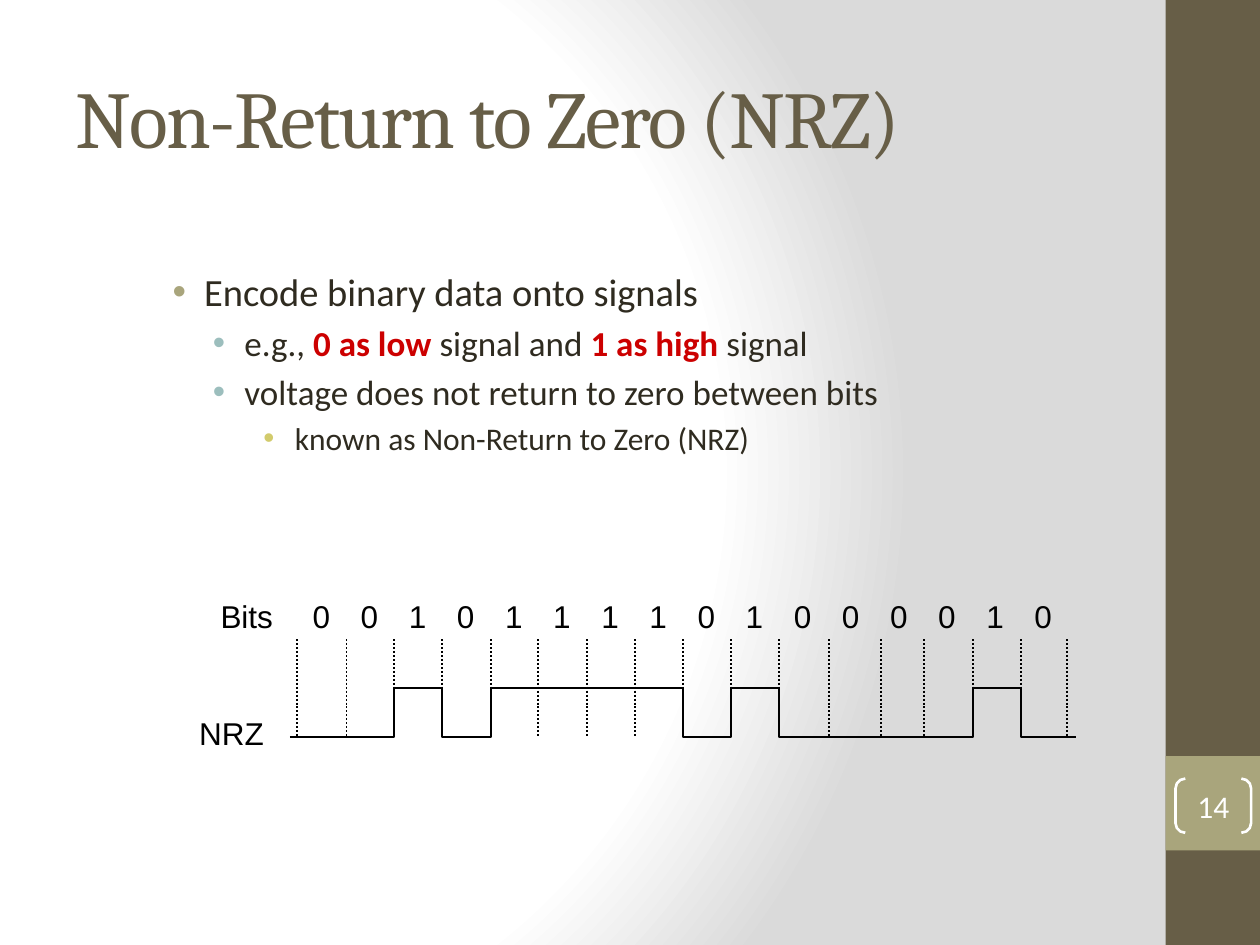
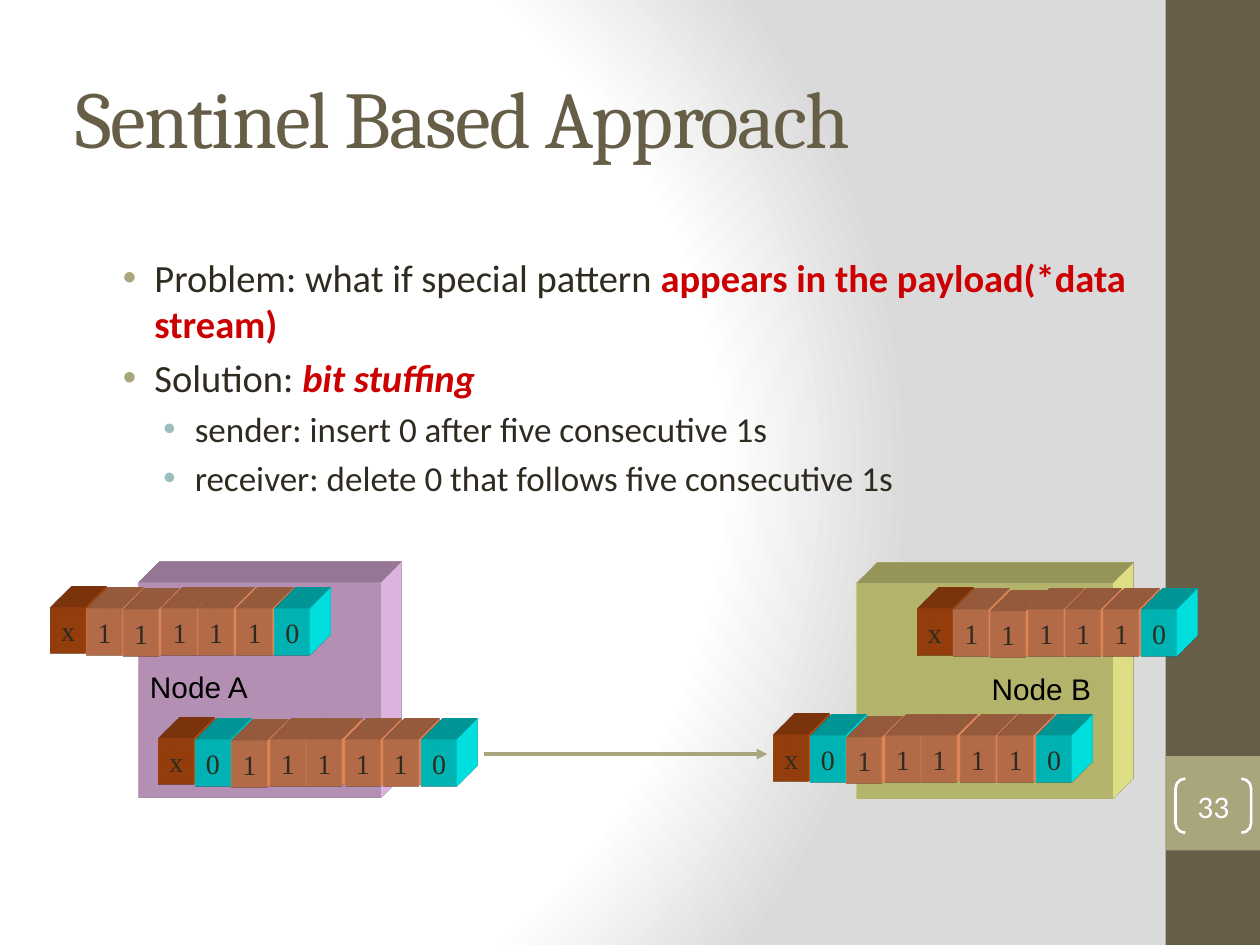
"""Builds two slides on line coding and framing."""
import collections
import pptx
import pptx.dml.color
import pptx.enum.dml
import pptx.enum.shapes
import pptx.enum.text
import pptx.oxml.ns
import pptx.util
from lxml import etree

RGB = pptx.dml.color.RGBColor
SHAPE = pptx.enum.shapes.MSO_SHAPE
LINE = pptx.enum.shapes.MSO_CONNECTOR.STRAIGHT
ALIGN = pptx.enum.text.PP_ALIGN
ANCHOR = pptx.enum.text.MSO_ANCHOR
qn = pptx.oxml.ns.qn

BROWN = RGB(0x67, 0x5E, 0x47)
KHAKI = RGB(0xA9, 0xA5, 0x7C)
INK = RGB(0x2F, 0x2B, 0x20)
RED = RGB(0xCC, 0x00, 0x00)
BLACK = RGB(0x00, 0x00, 0x00)
WHITE = RGB(0xFF, 0xFF, 0xFF)
GREY = RGB(0xDA, 0xDA, 0xDA)
PINK = RGB(0xFF, 0xCC, 0xFF)
YELLOW = RGB(0xFF, 0xFF, 0x99)
BULLETS = (KHAKI, RGB(0x9C, 0xBE, 0xBD), RGB(0xD2, 0xCB, 0x6C))
BLOCKS = {"x": RGB(0xD2, 0x58, 0x14), "0": RGB(0x00, 0xFF, 0xFF), "1": RGB(0xFF, 0x99, 0x66)}

COLS, ROWS = 100, 75
CELL = pptx.util.Inches(0.1)
LEVEL_SIZES = (22, 20, 18)
LEVEL_INDENTS = (3.8, 7, 11)
HANG = 2.5
BOUNDS = (0, 3.9, 7.7, 11.5, 15.4, 19.1, 23, 26.8, 30.6, 34.4, 38.2, 42.2, 46.3, 49.7, 53.6, 57.4, 61.1)
SLOTS = ((0, 0), (2.9, 0.1), (5.8, 0.2), (8.85, 0.1), (11.75, 0.1), (14.8, 0.1), (17.8, 0.1), (20.85, 0.1))
STRONG = dict(color=RED, bold=True)

Box = collections.namedtuple("Box", "x y w h")


def cells(*values):
    """Turn grid cells into lengths."""
    return [pptx.util.Emu(round(v * CELL)) for v in values]


def add(parent, tag, **attributes):
    """Append a drawing element."""
    return etree.SubElement(parent, qn("a:" + tag), **attributes)


def write(p, text, size=18, font="Arial", color=BLACK, bold=False, italic=False, align=None, spacing=None):
    """Add one formatted run to a paragraph."""
    r = p.add_run()
    r.text = text
    r.font.size, r.font.name = pptx.util.Pt(size), font
    r.font.bold, r.font.italic = bold, italic
    r.font.color.rgb = color
    if align is not None:
        p.alignment = align
    if spacing is not None:
        r._r.get_or_add_rPr().set("spc", str(spacing))


def bare_frame(sp):
    """Remove the margins of a shape's text."""
    tf = sp.text_frame
    tf.margin_left = tf.margin_right = tf.margin_top = tf.margin_bottom = 0
    tf.word_wrap = False
    return tf


def label(s, box, text, **fmt):
    """Place a plain text box."""
    tf = bare_frame(s.shapes.add_textbox(*cells(*box)))
    write(tf.paragraphs[0], text, **fmt)


def paint(sp, fill=None, line=None, width=1):
    """Set fill and line, without shadow."""
    sp.shadow.inherit = False
    if fill is None:
        sp.fill.background()
    else:
        sp.fill.solid()
        sp.fill.fore_color.rgb = fill
    if line is None:
        sp.line.fill.background()
    else:
        sp.line.color.rgb = line
        sp.line.width = pptx.util.Pt(width)
    return sp


def shape(s, kind, box, **look):
    """Place a painted preset shape."""
    return paint(s.shapes.add_shape(kind, *cells(*box)), **look)


def outline(s, points, close=True, **look):
    """Draw a freeform through grid points."""
    start, *rest = [cells(*pt) for pt in points]
    fb = s.shapes.build_freeform(*start)
    fb.add_line_segments(rest, close=close)
    return paint(fb.convert_to_shape(), **look)


def extrude(sp, color):
    """Give a shape an oblique depth to the top right."""
    spPr = sp._element.spPr
    scene = add(spPr, "scene3d")
    add(scene, "camera", prst="legacyObliqueTopRight")
    add(scene, "lightRig", rig="legacyFlat3", dir="b")
    solid = add(spPr, "sp3d", extrusionH="430200", prstMaterial="legacyMatte")
    for bevel in ("bevelT", "bevelB"):
        add(solid, bevel, w="13500", h="13500", prst="angle")
    add(add(solid, "extrusionClr"), "srgbClr", val=str(color))
    return sp


def connect(s, start, end, color, width):
    """Draw a straight line without shadow."""
    c = s.shapes.add_connector(LINE, *cells(*start, *end))
    c.line.color.rgb = color
    c.line.width = pptx.util.Pt(width)
    add(c._element.spPr, "effectLst")
    return c


def set_background(master):
    """Give the master a round gradient."""
    master.background.fill.gradient()
    grad = next(master.element.iter(qn("a:gradFill")))
    for child in list(grad):
        grad.remove(child)
    stops = add(grad, "gsLst")
    for pos, color in ((0, WHITE), (75, WHITE), (100, GREY)):
        add(add(stops, "gs", pos=str(pos * 1000)), "srgbClr", val=str(color))
    circle = add(grad, "path", path="circle")
    add(circle, "fillToRect", l="20000", t="50000", r="100000", b="50000")


def side_band(s, box, number):
    """Draw the right band with the page number."""
    shape(s, SHAPE.RECTANGLE, box, fill=BROWN)
    tab = Box(box.x, box.y + 0.8 * box.h, box.w, box.w)
    shape(s, SHAPE.RECTANGLE, tab, fill=KHAKI)
    sp = shape(s, SHAPE.DOUBLE_BRACKET, (tab.x + 0.8, tab.y + 1.8, 6, 4.3), line=WHITE, width=1.5)
    sp.adjustments[0] = 0.18
    tf = bare_frame(sp)
    tf.vertical_anchor = ANCHOR.MIDDLE
    write(tf.paragraphs[0], str(number), font="Calibri", color=WHITE, align=ALIGN.CENTER)


def place(ph, box, anchor):
    """Move a placeholder and fix its text area."""
    ph.left, ph.top, ph.width, ph.height = cells(*box)
    tf = ph.text_frame
    tf.word_wrap = True
    tf.auto_size = pptx.enum.text.MSO_AUTO_SIZE.NONE
    tf.vertical_anchor = anchor
    return tf


def bullet(p, level):
    """Set indent and coloured bullet of a list level."""
    p.level = level
    pPr = p._p.get_or_add_pPr()
    indent, hang = cells(LEVEL_INDENTS[level], -HANG)
    pPr.set("marL", str(indent))
    pPr.set("indent", str(hang))
    add(add(pPr, "buClr"), "srgbClr", val=str(BULLETS[level]))
    add(pPr, "buFont", typeface="Arial")
    add(pPr, "buChar", char="•")


def bullet_list(ph, box, items):
    """Fill the body with levelled items of runs."""
    tf = place(ph, box, ANCHOR.TOP)
    for i, (level, runs) in enumerate(items):
        p = tf.add_paragraph() if i else tf.paragraphs[0]
        bullet(p, level)
        if i == 0:
            p.space_before = pptx.util.Pt(0)
        for text, fmt in runs:
            write(p, text, **{"size": LEVEL_SIZES[level], "font": "Calibri", "color": INK, **fmt})


def content_slide(prs, title, number, body_box, items):
    """Add a slide with title, list and side band."""
    s = prs.slides.add_slide(prs.slide_layouts[1])
    tf = place(s.shapes.title, (5, 3, 83.3, 12.5), ANCHOR.MIDDLE)
    write(tf.paragraphs[0], title, size=46, font="Cambria", color=BROWN, align=ALIGN.LEFT, spacing=-100)
    bullet_list(s.placeholders[1], body_box, items)
    side_band(s, Box(92.5, 0, 7.5, ROWS), number)
    return s


def signal_chart(s, box, bits):
    """Draw bits, their boundaries and the NRZ signal."""
    left, low = box.x + 7.8, box.y + box.h
    high, step = low - 3.9, BOUNDS[-1] / len(bits)
    label(s, (box.x + 1.7, box.y, 4.2, 3), "Bits")
    label(s, (box.x, low - 1.8, 5.2, 3), "NRZ")
    for i, bit in enumerate(bits):
        label(s, (left + i * step, box.y, step, 3), bit, align=ALIGN.CENTER)
    for bound in BOUNDS:
        c = connect(s, (left + bound, box.y + 3.3), (left + bound, low), BLACK, 1.13)
        c.line.dash_style = pptx.enum.dml.MSO_LINE.ROUND_DOT
    points = [(left - 0.6, low)]
    for before, bit, bound in zip(bits, bits[1:], BOUNDS[1:]):
        if bit != before:
            levels = (low, high) if bit == "1" else (high, low)
            points += [(left + bound, y) for y in levels]
    points.append((box.x + box.w, low))
    outline(s, points, close=False, line=BLACK, width=1.13)


def bit_row(s, x, y, bits):
    """Line up one block for each bit."""
    for bit, (dx, dy) in zip(bits, SLOTS):
        color = BLOCKS[bit]
        sp = shape(s, SHAPE.RECTANGLE, (x + dx, y + dy, 2.8, 3.7), fill=color)
        tf = bare_frame(extrude(sp, color))
        tf.vertical_anchor = ANCHOR.MIDDLE
        write(tf.paragraphs[0], bit, size=16, font="Times New Roman", color=INK, align=ALIGN.CENTER)


def node(s, box, name, color, name_x, plain_at, stuffed_at):
    """Draw a node with its plain and stuffed bits."""
    right, low = box.x + box.w, box.y + box.h
    corners = [(box.x, box.y), (right, box.y), (right, low), (box.x, low)]
    extrude(outline(s, corners, fill=color), color)
    label(s, (box.x + name_x, box.y + 6.9, 8.2, 2.8), name, size=17)
    bit_row(s, box.x + plain_at[0], box.y + plain_at[1], "x111110")
    bit_row(s, box.x + stuffed_at[0], box.y + stuffed_at[1], "x0111110")


def nrz_slide(prs):
    """Build the slide on NRZ coding."""
    s = content_slide(prs, "Non-Return to Zero (NRZ)", 14, (11.4, 20.8, 81.1, 24.6), [
        (0, [("Encode binary data onto signals", {})]),
        (1, [("e.g., ", {}), ("0 as low", STRONG), (" signal and ", {}),
             ("1 as high", STRONG), (" signal", {})]),
        (1, [("voltage does not return to zero between bits", {})]),
        (2, [("known as Non-Return to Zero (NRZ)", {})]),
    ])
    signal_chart(s, Box(15.8, 47.42, 69.6, 11.06), "0010111101000010")


def sentinel_slide(prs):
    """Build the slide on bit stuffing."""
    s = content_slide(prs, "Sentinel Based Approach", 33, (7.46, 19.66, 85, 21.2), [
        (0, [("Problem: what if special pattern ", {}),
             ("appears in the payload(*data stream)", STRONG)]),
        (0, [("Solution: ", {}), ("bit stuffing", dict(STRONG, italic=True))]),
        (1, [("sender: insert 0 after five consecutive 1s", {})]),
        (1, [("receiver: delete 0 that follows five consecutive 1s", {})]),
    ])
    arrow = connect(s, (38.4, 59.85), (60.9, 59.85), KHAKI, 2)
    add(arrow.line._get_or_add_ln(), "tailEnd", type="triangle")
    node(s, Box(11, 46.2, 19.2, 17.1), "Node A", PINK, 0.9, (-7, 2), (1.6, 12.4))
    node(s, Box(68, 46.3, 20.3, 17.1), "Node B", YELLOW, 10.7, (4.8, 2), (-6.6, 12))


def main():
    """Build and save the deck."""
    prs = pptx.Presentation()
    prs.slide_width, prs.slide_height = cells(COLS, ROWS)
    set_background(prs.slide_master)
    nrz_slide(prs)
    sentinel_slide(prs)
    prs.save("out.pptx")


if __name__ == "__main__":
    main()
